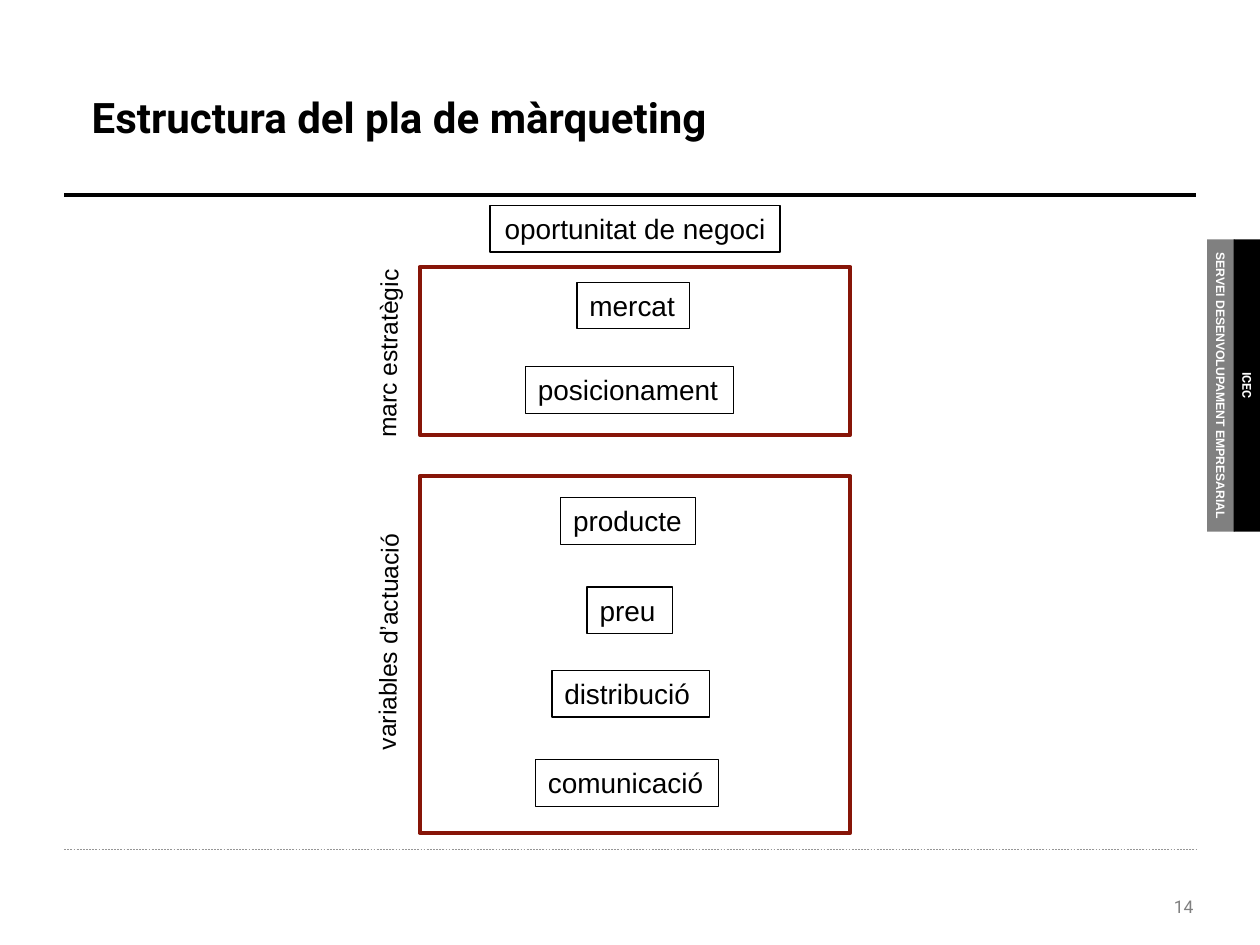
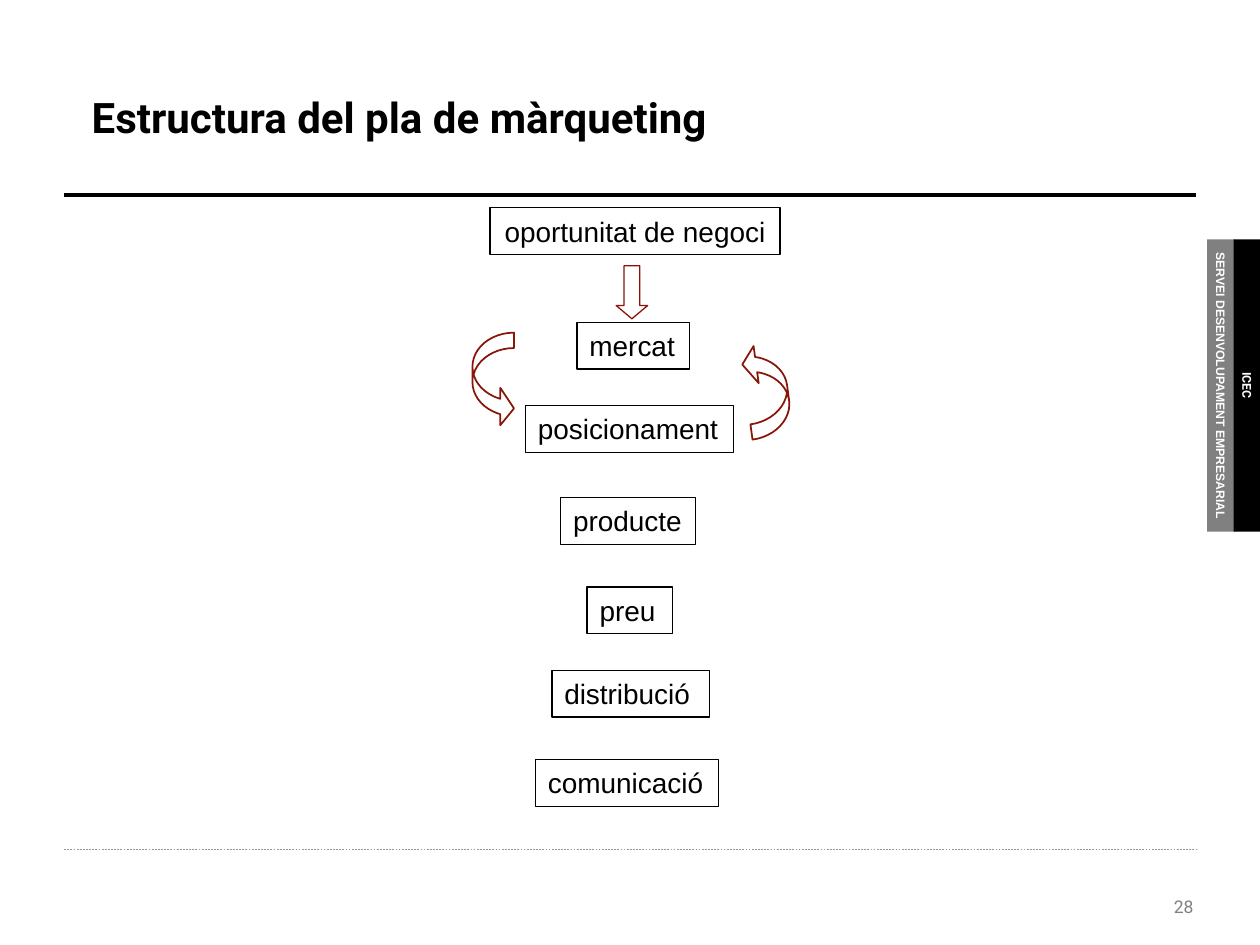
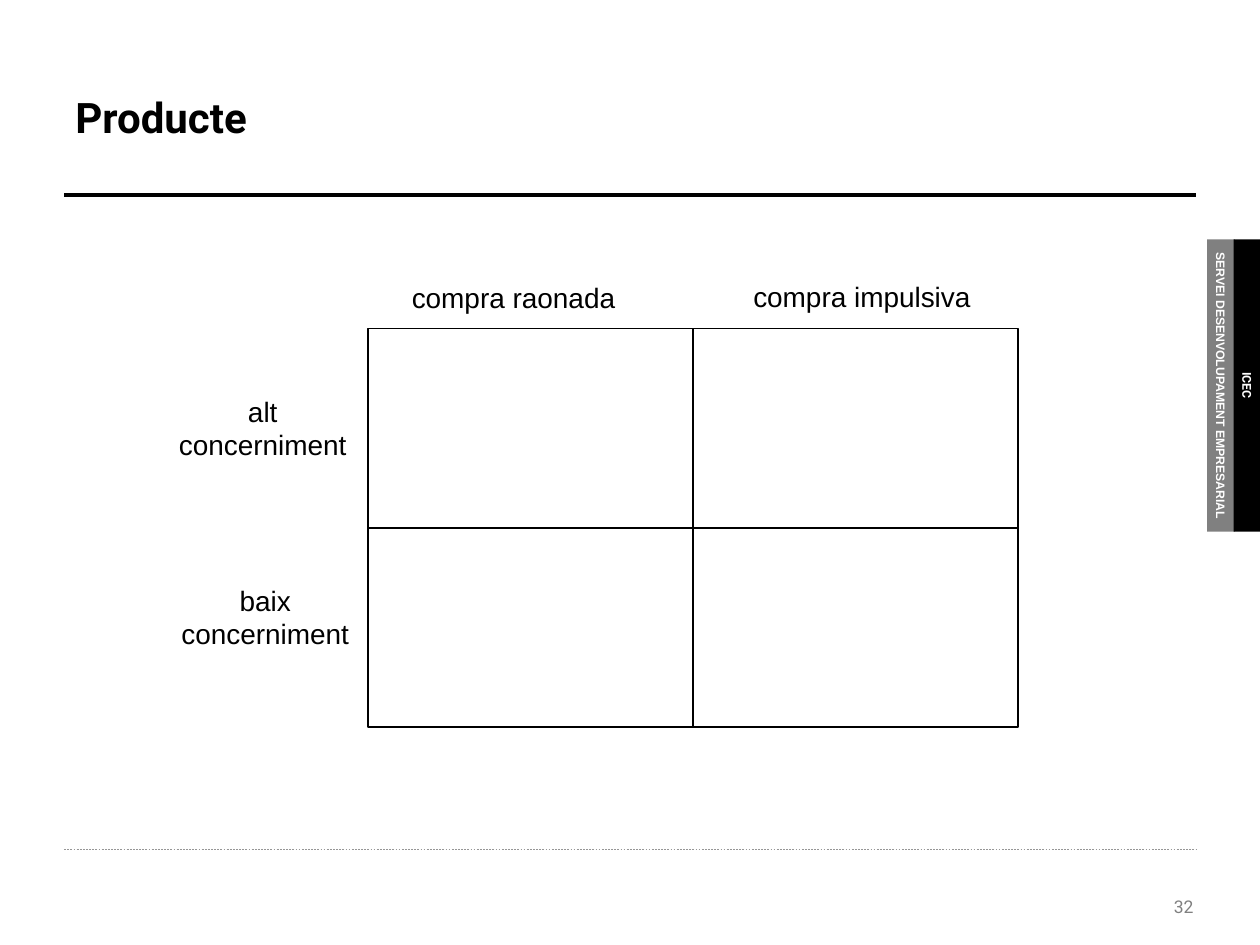
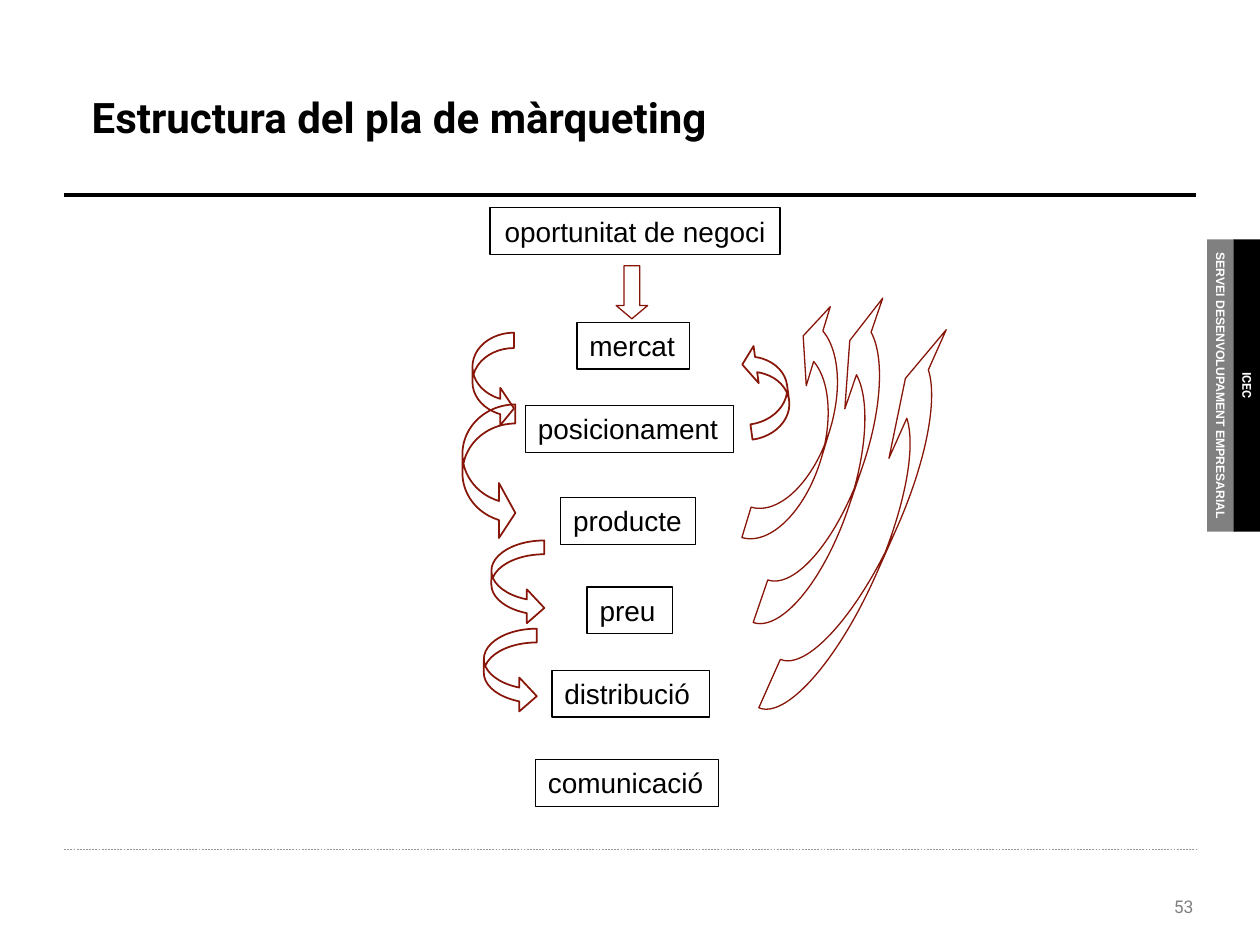
from dataclasses import dataclass

from lxml import etree
from pptx import Presentation
from pptx import util as u
from pptx.dml.color import RGBColor
from pptx.enum import dml, shapes, text
from pptx.oxml.ns import qn

SHAPE = shapes.MSO_SHAPE
ALIGN = text.PP_ALIGN
ANCHOR = text.MSO_ANCHOR


@dataclass(frozen=True)
class Theme:
    """Colours, fonts and type sizes of the deck."""
    ink: str = "000000"
    paper: str = "FFFFFF"
    grey: str = "808080"
    rule: str = "969696"
    accent: str = "871508"
    body_font: str = "Arial"
    title_font: str = "Roboto"
    title_size: int = 24
    label_size: int = 16
    side_size: int = 14
    number_size: int = 10
    band_size: int = 7


@dataclass(frozen=True)
class Box:
    """A rectangle in inches."""
    left: float
    top: float
    width: float
    height: float

    def inner(self, left, top, width, height):
        """Return a box placed relative to this one."""
        return Box(self.left + left, self.top + top, width, height)

    def lengths(self):
        """Return the four lengths for python-pptx."""
        return [u.Inches(value) for value in (self.left, self.top, self.width, self.height)]


THEME = Theme()
PAGE = Box(0, 0, 10, 7.5)
PLAN_BOX = Box(3.33, 1.63, 3.42, 4.98)
MATRIX_BOX = Box(2.92, 2.61, 5.16, 3.16)
PLAN_TITLE = "Estructura del pla de màrqueting"

STAGES = (
    ("oportunitat de negoci", 0.56, 2.3, False),
    ("mercat", 1.25, 0.89, False),
    ("posicionament", 0.84, 1.65, False),
    ("producte", 1.12, 1.07, False),
    ("preu", 1.33, 0.68, True),
    ("distribució", 1.05, 1.25, True),
    ("comunicació", 0.92, 1.45, False),
)
ACTION_TOPS = (2.32, 3.03, 3.69, 4.4)
FRAMED_TOPS = (0, 0.61, 1.28) + ACTION_TOPS
LINKED_TOPS = (0.02, 0.93, 1.59) + ACTION_TOPS

RIGHT, UP, DOWN = SHAPE.CURVED_RIGHT_ARROW, SHAPE.CURVED_UP_ARROW, SHAPE.DOWN_ARROW
MARKET_BEND = (0.37, 0.9, 0.33)
ACTION_BEND = (0.26, 0.64, 0.33)
MARKET_ARROWS = (
    (RIGHT, (0.42, 1.01, 0.33, 0.75), 0, MARKET_BEND, 1),
    (RIGHT, (2.59, 1.09, 0.33, 0.75), 172.2, MARKET_BEND, 1),
    (DOWN, (1.56, 0.48, 0.25, 0.42), 0, (0.5, 0.42), 0.75),
)
ACTION_ARROWS = (
    (RIGHT, (0.34, 1.58, 0.42, 1.08), 0, (0.36, 1.04, 0.31), 1),
    (UP, (2.05, 1.53, 2, 0.42), 286.9, (0.6, 1.56, 0.33), 0.75),
    (RIGHT, (0.57, 2.66, 0.42, 0.67), 0, ACTION_BEND, 1),
    (UP, (1.89, 1.83, 2.83, 0.42), 288.9, (0.85, 2.21, 0.33), 0.75),
    (RIGHT, (0.51, 3.36, 0.42, 0.67), 0, ACTION_BEND, 1),
    (UP, (1.87, 2.3, 3.42, 0.42), 294, (1.02, 2.66, 0.33), 0.75),
)


def colour(value):
    """Return a colour object for a hex value."""
    return RGBColor.from_string(value)


def write(shape, words, size=THEME.label_size, font=THEME.body_font, ink=THEME.ink,
          bold=False, align=ALIGN.LEFT, anchor=ANCHOR.TOP, wrap=True):
    """Write one paragraph per line of words into a shape."""
    frame = shape.text_frame
    frame.word_wrap = wrap
    frame.vertical_anchor = anchor
    for index, line in enumerate(words.split("\n")):
        para = frame.add_paragraph() if index else frame.paragraphs[0]
        para.alignment = align
        span = para.add_run()
        span.text = line
        span.font.size = u.Pt(size)
        span.font.name = font
        span.font.bold = bold
        span.font.color.rgb = colour(ink)


def add_text(page, box, words, rotation=0, **style):
    """Add a text box."""
    shape = page.shapes.add_textbox(*box.lengths())
    shape.rotation = rotation
    write(shape, words, **style)


def add_outline(page, box, kind=SHAPE.RECTANGLE, fill=None, line=None, weight=0.75, rotation=0):
    """Add a preset shape with an optional fill and line."""
    shape = page.shapes.add_shape(kind, *box.lengths())
    shape.shadow.inherit = False
    shape.rotation = rotation
    if fill:
        shape.fill.solid()
        shape.fill.fore_color.rgb = colour(fill)
    else:
        shape.fill.background()
    if line:
        shape.line.color.rgb = colour(line)
        shape.line.width = u.Pt(weight)
    else:
        shape.line.fill.background()
    return shape


def add_rule(page, box, top, ink, weight, dash=None):
    """Draw a horizontal rule inside the page margins."""
    margin = 0.51
    height = u.Inches(box.top + top)
    rule = page.shapes.add_connector(
        shapes.MSO_CONNECTOR.STRAIGHT, u.Inches(box.left + margin), height,
        u.Inches(box.left + box.width - margin), height)
    rule.line.color.rgb = colour(ink)
    rule.line.width = u.Pt(weight)
    if dash:
        rule.line.dash_style = dash
    etree.SubElement(rule._element.spPr, qn("a:effectLst"))


def add_page(deck, title, number, title_left=0.63, box=PAGE):
    """Add a slide with its title, rules, side bands and number."""
    page = deck.slides.add_slide(deck.slide_layouts[6])
    add_rule(page, box, 1.55, THEME.ink, 2.25)
    add_rule(page, box, 6.74, THEME.rule, 0.25, dml.MSO_LINE.DASH)
    add_text(page, box.inner(7.84, 7.06, 1.73, 0.27), str(number), size=THEME.number_size,
             font=THEME.title_font, ink=THEME.grey, align=ALIGN.RIGHT, anchor=ANCHOR.MIDDLE)
    bands = (("SERVEI DESENVOLUPAMENT EMPRESARIAL", 8.53, THEME.grey, THEME.body_font),
             ("ICEC", 8.74, THEME.ink, THEME.title_font))
    for words, left, fill, font in bands:
        band = add_outline(page, box.inner(left, 2.95, 2.32, 0.22), fill=fill, rotation=90)
        write(band, words, size=THEME.band_size, font=font, ink=THEME.paper, bold=True,
              align=ALIGN.CENTER, anchor=ANCHOR.MIDDLE)
    add_text(page, box.inner(title_left, 0.3, 9, 1.25), title, size=THEME.title_size,
             font=THEME.title_font, bold=True, anchor=ANCHOR.MIDDLE)
    return page


def add_stages(page, box, tops):
    """Add the column of plan stages at the given tops."""
    for index, ((words, left, width, wrap), top) in enumerate(zip(STAGES, tops)):
        stage = add_outline(page, box.inner(left, top, width, 0.37), line=THEME.ink)
        write(stage, words, wrap=wrap, align=ALIGN.LEFT if index else ALIGN.CENTER)


def add_frames(page, box):
    """Frame the two groups of stages and name them at the side."""
    groups = (("marc estratègic", 0.49, 1.33, (-1.02, 1, 1.54, 0.34)),
              ("variables d’actuació", 2.15, 2.83, (-1.21, 3.29, 1.92, 0.34)))
    for words, top, height, place in groups:
        add_outline(page, box.inner(0, top, box.width, height), line=THEME.accent, weight=2.25)
        add_text(page, box.inner(*place), words, rotation=270.8, size=THEME.side_size, wrap=False)


def add_arrows(page, box, arrows):
    """Add outlined arrows between stages."""
    for kind, place, rotation, bend, weight in arrows:
        arrow = add_outline(page, box.inner(*place), kind=kind, line=THEME.accent,
                            weight=weight, rotation=rotation)
        for index, value in enumerate(bend):
            arrow.adjustments[index] = value


def add_matrix(page, box):
    """Add the two by two purchase matrix with its headings."""
    width, height = box.width / 2, box.height / 2
    for row in range(2):
        for column in range(2):
            add_outline(page, box.inner(column * width, row * height, width, height),
                        fill=THEME.paper, line=THEME.ink)
    headings = (("compra raonada", (0.25, -0.43, 1.84, 0.37), ALIGN.LEFT),
                ("compra impulsiva", (2.96, -0.44, 1.95, 0.37), ALIGN.LEFT),
                ("alt\nconcerniment", (-1.63, 0.47, 1.59, 0.64), ALIGN.CENTER),
                ("baix\nconcerniment", (-1.59, 1.97, 1.55, 0.64), ALIGN.CENTER))
    for words, place, align in headings:
        add_text(page, box.inner(*place), words, align=align, wrap=False)


def main():
    """Build and save the deck."""
    deck = Presentation()
    deck.slide_width, deck.slide_height = u.Inches(PAGE.width), u.Inches(PAGE.height)

    page = add_page(deck, PLAN_TITLE, 14)
    add_stages(page, PLAN_BOX, FRAMED_TOPS)
    add_frames(page, PLAN_BOX)

    page = add_page(deck, PLAN_TITLE, 28)
    add_stages(page, PLAN_BOX, LINKED_TOPS)
    add_arrows(page, PLAN_BOX, MARKET_ARROWS)

    page = add_page(deck, "Producte", 32, title_left=0.5)
    add_matrix(page, MATRIX_BOX)

    page = add_page(deck, PLAN_TITLE, 53)
    add_stages(page, PLAN_BOX, LINKED_TOPS)
    add_arrows(page, PLAN_BOX, MARKET_ARROWS + ACTION_ARROWS)

    deck.save("out.pptx")


if __name__ == "__main__":
    main()
